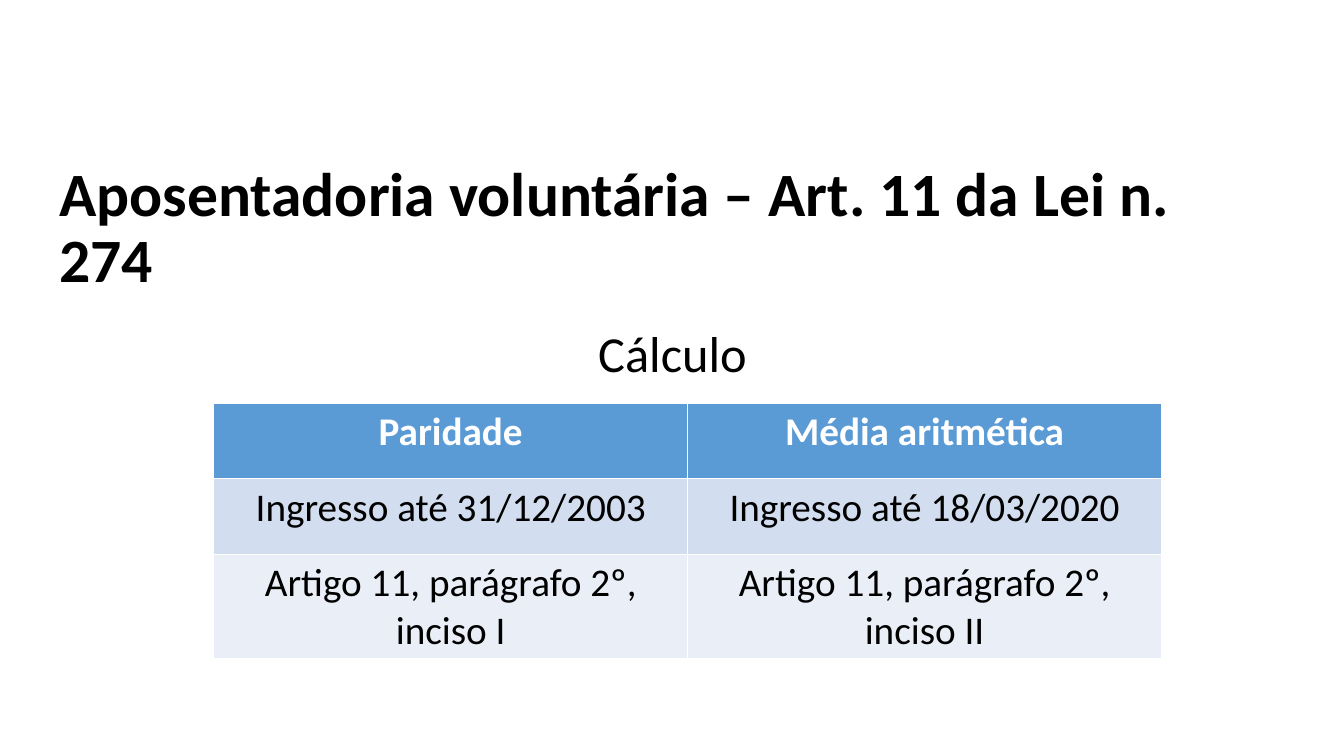
from pptx import Presentation
from pptx.dml.color import RGBColor
from pptx.enum.text import MSO_ANCHOR, PP_ALIGN
from pptx.util import Inches, Pt

FONT_NAME = "Calibri"
BLACK = RGBColor(0x00, 0x00, 0x00)
WHITE = RGBColor(0xFF, 0xFF, 0xFF)
HEADER_BLUE = RGBColor(0x5B, 0x9B, 0xD5)
BAND_BLUE = RGBColor(0xD2, 0xDE, 0xEF)
BAND_LIGHT = RGBColor(0xEA, 0xEF, 0xF7)

ROW_FILLS = [HEADER_BLUE, BAND_BLUE, BAND_LIGHT]
CALCULATION_ROWS = [
    ["Paridade", "Média aritmética"],
    ["Ingresso até 31/12/2003", "Ingresso até 18/03/2020"],
    ["Artigo 11, parágrafo 2º, inciso I", "Artigo 11, parágrafo 2º, inciso II"],
]


def set_text(text_frame, text, size, color=BLACK, bold=False, align=PP_ALIGN.LEFT):
    text_frame.text = text
    paragraph = text_frame.paragraphs[0]
    paragraph.alignment = align
    font = paragraph.runs[0].font
    font.name = FONT_NAME
    font.size = Pt(size)
    font.bold = bold
    font.color.rgb = color
    return paragraph


def add_text(slide, text, left, top, width, height, size, margin_top=0.05,
             anchor=MSO_ANCHOR.TOP, **style):
    box = slide.shapes.add_textbox(Inches(left), Inches(top), Inches(width), Inches(height))
    text_frame = box.text_frame
    text_frame.word_wrap = True
    text_frame.vertical_anchor = anchor
    text_frame.margin_top = Inches(margin_top)
    set_text(text_frame, text, size, **style).line_spacing = 0.9


def add_calculation_table(slide, left, top, column_width, row_height):
    row_count, column_count = len(CALCULATION_ROWS), len(CALCULATION_ROWS[0])
    table = slide.shapes.add_table(
        row_count, column_count, Inches(left), Inches(top),
        Inches(column_width * column_count), Inches(row_height * row_count)).table
    for row_index, (texts, fill) in enumerate(zip(CALCULATION_ROWS, ROW_FILLS)):
        is_header = row_index == 0
        for column_index, text in enumerate(texts):
            cell = table.cell(row_index, column_index)
            cell.fill.solid()
            cell.fill.fore_color.rgb = fill
            set_text(cell.text_frame, text, 28, WHITE if is_header else BLACK,
                     is_header, PP_ALIGN.CENTER)


def main():
    presentation = Presentation()
    presentation.slide_width = Inches(13.33)
    presentation.slide_height = Inches(7.5)
    slide = presentation.slides.add_slide(presentation.slide_layouts[6])

    # Title
    add_text(slide, "Aposentadoria voluntária – Art. 11 da Lei n. 274",
             0.49, 1.72, 11.93, 1.11, 44, anchor=MSO_ANCHOR.MIDDLE, bold=True)

    # Subtitle and table of calculation rules
    add_text(slide, "Cálculo", 0.92, 2.83, 11.5, 4.67, 36,
             margin_top=0.43, align=PP_ALIGN.CENTER)
    add_calculation_table(slide, 2.12, 4, 4.7, 0.75)

    presentation.save("out.pptx")


if __name__ == "__main__":
    main()
